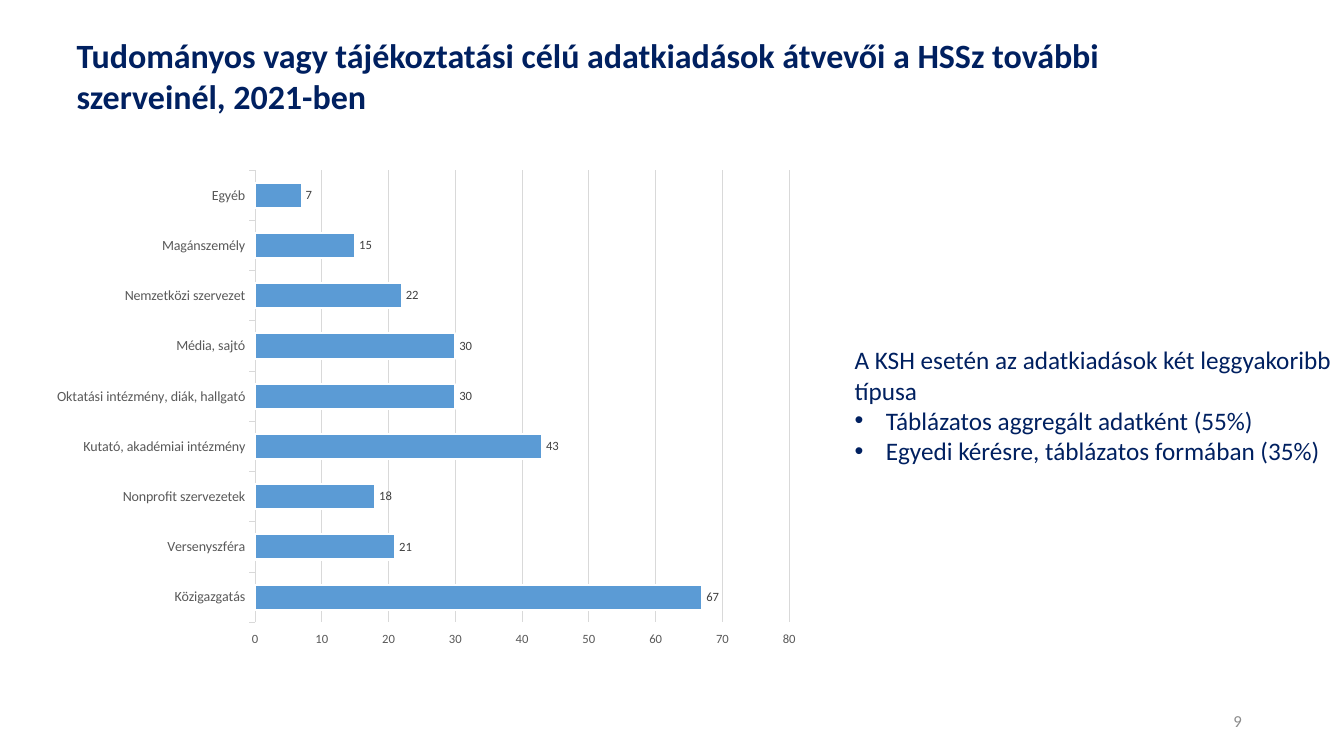
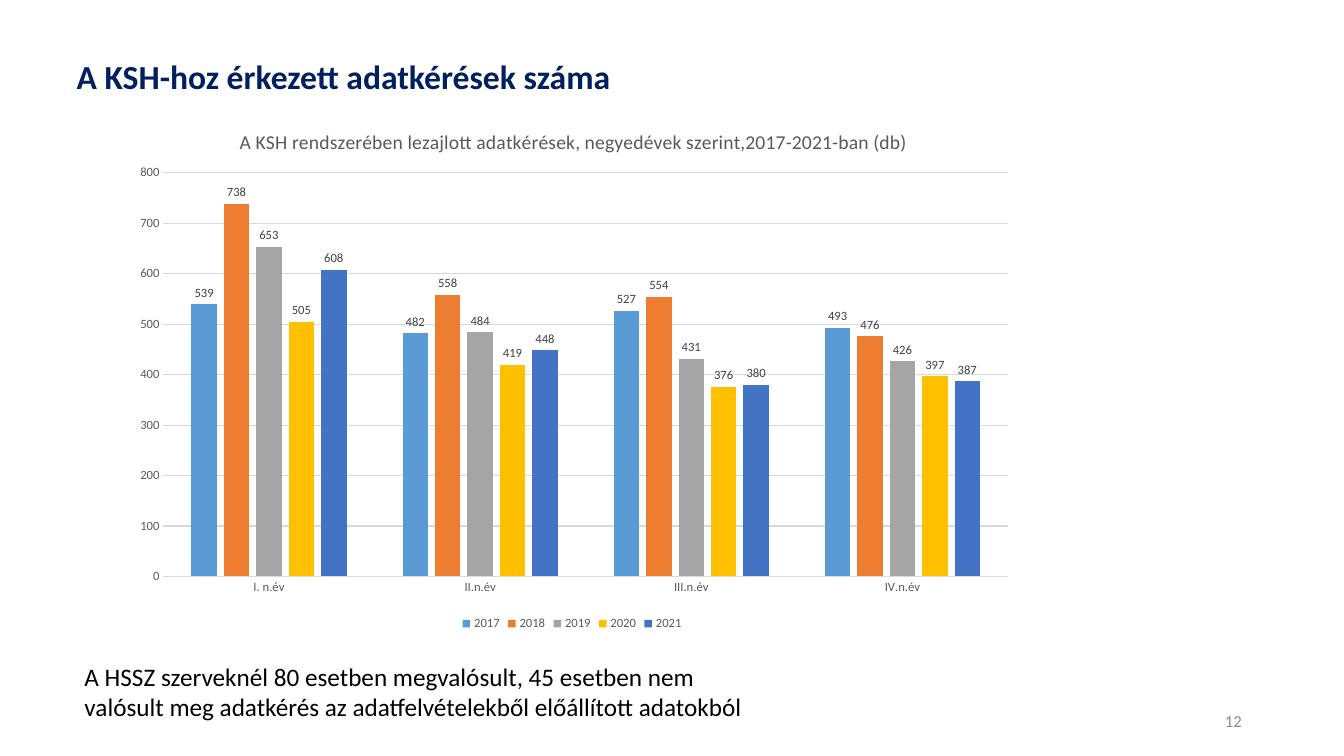
from dataclasses import dataclass

from lxml.etree import SubElement
from pptx import Presentation
from pptx.chart.data import CategoryChartData
from pptx.dml.color import RGBColor
from pptx.enum.chart import XL_CHART_TYPE, XL_LABEL_POSITION, XL_LEGEND_POSITION, XL_TICK_MARK
from pptx.enum.text import MSO_ANCHOR, PP_ALIGN
from pptx.oxml.ns import qn
from pptx.util import Inches, Pt

SLIDE_WIDTH, SLIDE_HEIGHT = Inches(13.33), Inches(7.5)
TITLE_ONLY = 5


@dataclass(frozen=True)
class Theme:
    font: str = "Calibri"
    navy: str = "002060"
    black: str = "000000"
    page_grey: str = "8C8C8C"
    axis_grey: str = "595959"
    label_grey: str = "404040"
    grid_grey: str = "D9D9D9"
    white: str = "FFFFFF"
    series: tuple = ("5B9BD5", "ED7D31", "A5A5A5", "FFC000", "4472C4")
    title: float = 24
    long_title: float = 24.3
    body: float = 18
    chart_title: float = 14
    page: float = 12
    category: float = 10
    small: float = 9


THEME = Theme()


def area(left, top, width, height):
    """Turn percentages of the slide's width and height into lengths."""
    return (
        int(SLIDE_WIDTH * left / 100),
        int(SLIDE_HEIGHT * top / 100),
        int(SLIDE_WIDTH * width / 100),
        int(SLIDE_HEIGHT * height / 100),
    )


def style_font(font, size, color, bold=False):
    font.name = THEME.font
    font.size = Pt(size)
    font.bold = bold
    font.color.rgb = RGBColor.from_string(color)


def add_run(paragraph, text, size, color, bold=False):
    run = paragraph.add_run()
    run.text = text
    style_font(run.font, size, color, bold)


def add_title(slide, text, top, height, size=THEME.title, anchor=MSO_ANCHOR.MIDDLE):
    title = slide.shapes.title
    title.left, title.top, title.width, title.height = area(4.95, top, 86.25, height)
    frame = title.text_frame
    frame.word_wrap = True
    frame.vertical_anchor = anchor
    frame.margin_top = frame.margin_bottom = 0
    paragraph = frame.paragraphs[0]
    paragraph.alignment = PP_ALIGN.LEFT
    add_run(paragraph, text, size, THEME.navy, bold=True)


def add_text_frame(slide, position):
    frame = slide.shapes.add_textbox(*area(*position)).text_frame
    frame.word_wrap = True
    return frame


def add_page_number(slide, number):
    frame = add_text_frame(slide, (70.65, 92.67, 22.5, 5.33))
    frame.vertical_anchor = MSO_ANCHOR.MIDDLE
    paragraph = frame.paragraphs[0]
    paragraph.alignment = PP_ALIGN.RIGHT
    add_run(paragraph, str(number), THEME.page, THEME.page_grey)


def add_bullet(paragraph):
    properties = paragraph._p.get_or_add_pPr()
    indent = Inches(0.31)
    properties.set("marL", str(indent))
    properties.set("indent", str(-indent))
    SubElement(properties, qn("a:buFont"), typeface="Arial")
    SubElement(properties, qn("a:buChar"), char="•")


def add_note(slide, position, lead, color, bullets=()):
    frame = add_text_frame(slide, position)
    add_run(frame.paragraphs[0], lead, THEME.body, color)
    for text in bullets:
        paragraph = frame.add_paragraph()
        add_bullet(paragraph)
        add_run(paragraph, text, THEME.body, color)


def set_layout(element, index, **shares):
    """Place a chart part by shares of the chart's size."""
    for old in element.findall(qn("c:layout")):
        element.remove(old)
    layout = SubElement(element, qn("c:layout"))
    element.insert(index, layout)
    manual = SubElement(layout, qn("c:manualLayout"))
    if "w" in shares:
        SubElement(manual, qn("c:layoutTarget"), val="inner")
    for mode in ("xMode", "yMode"):
        SubElement(manual, qn(f"c:{mode}"), val="edge")
    for key, share in shares.items():
        SubElement(manual, qn(f"c:{key}"), val=str(share))


def style_line(line, color, width=0.75):
    line.color.rgb = RGBColor.from_string(color)
    line.width = Pt(width)


def style_axes(chart, maximum, unit, category_size, tick):
    categories, values = chart.category_axis, chart.value_axis
    style_font(categories.tick_labels.font, category_size, THEME.axis_grey)
    style_font(values.tick_labels.font, THEME.small, THEME.axis_grey)
    for axis in (categories, values):
        axis.major_tick_mark = tick
        axis.minor_tick_mark = XL_TICK_MARK.NONE
    categories.has_major_gridlines = False
    style_line(categories.format.line, THEME.grid_grey)
    values.minimum_scale, values.maximum_scale = 0, maximum
    values.major_unit = unit
    values.has_major_gridlines = True
    style_line(values.major_gridlines.format.line, THEME.grid_grey)
    values.format.line.fill.background()


def add_bars(slide, kind, position, categories, series, gap, overlap=0, outline=None):
    data = CategoryChartData()
    data.categories = categories
    for name, values in series.items():
        data.add_series(name, values)
    chart = slide.shapes.add_chart(kind, *area(*position), data).chart
    chart.has_title = chart.has_legend = False
    style_font(chart.font, THEME.category, THEME.black)

    plot = chart.plots[0]
    plot.vary_by_categories = False
    plot.gap_width, plot.overlap = gap, overlap
    plot.has_data_labels = True
    labels = plot.data_labels
    labels.show_value = True
    labels.position = XL_LABEL_POSITION.OUTSIDE_END
    style_font(labels.font, THEME.small, THEME.label_grey)
    for bars, color in zip(plot.series, THEME.series):
        bars.invert_if_negative = False
        bars.format.fill.solid()
        bars.format.fill.fore_color.rgb = RGBColor.from_string(color)
        if outline:
            style_line(bars.format.line, outline, 1.5)
    return chart


def add_chart_title(chart, text, x, y):
    chart.has_title = True
    paragraph = chart.chart_title.text_frame.paragraphs[0]
    add_run(paragraph, text, THEME.chart_title, THEME.axis_grey)
    set_layout(chart._chartSpace.chart.find(qn("c:title")), 1, x=x, y=y)


def add_bottom_legend(chart):
    chart.has_legend = True
    chart.legend.position = XL_LEGEND_POSITION.BOTTOM
    chart.legend.include_in_layout = False
    style_font(chart.legend.font, THEME.small, THEME.axis_grey)


def build_recipients(slide):
    add_title(
        slide,
        "Tudományos vagy tájékoztatási célú adatkiadások átvevői a HSSz további "
        "szerveinél, 2021-ben",
        4.53, 19.33, THEME.long_title, MSO_ANCHOR.TOP,
    )
    add_page_number(slide, 9)
    add_note(
        slide, (62.85, 44.93, 37.13, 17.47),
        "A KSH esetén az adatkiadások két leggyakoribb típusa", THEME.navy,
        ("Táblázatos aggregált adatként (55%)", "Egyedi kérésre, táblázatos formában (35%)"),
    )
    recipients = {
        "Közigazgatás": 67,
        "Versenyszféra": 21,
        "Nonprofit szervezetek": 18,
        "Kutató, akadémiai intézmény": 43,
        "Oktatási intézmény, diák, hallgató": 30,
        "Média, sajtó": 30,
        "Nemzetközi szervezet": 22,
        "Magánszemély": 15,
        "Egyéb": 7,
    }
    chart = add_bars(
        slide, XL_CHART_TYPE.BAR_CLUSTERED, (2.85, 21.2, 57.6, 65.73),
        list(recipients), {"Series 1": list(recipients.values())},
        gap=100, outline=THEME.white,
    )
    style_axes(chart, 80, 10, THEME.category, XL_TICK_MARK.OUTSIDE)
    set_layout(chart._chartSpace.chart.plotArea, 0, x=0.28, y=0.02, w=0.69, h=0.91)


def build_requests(slide):
    add_title(slide, "A KSH-hoz érkezett adatkérések száma", 2.67, 14.8)
    add_page_number(slide, 12)
    add_note(
        slide, (5.55, 86.8, 51.15, 9.47),
        "A HSSZ szerveknél 80 esetben megvalósult, 45 esetben nem valósult meg "
        "adatkérés az adatfelvételekből előállított adatokból",
        THEME.black,
    )
    requests = {
        "2017": (539, 482, 527, 493),
        "2018": (738, 558, 554, 476),
        "2019": (653, 484, 431, 426),
        "2020": (505, 419, 376, 397),
        "2021": (608, 448, 380, 387),
    }
    chart = add_bars(
        slide, XL_CHART_TYPE.COLUMN_CLUSTERED, (8.78, 13.73, 67.58, 70.27),
        ("I. n.év", "II.n.év", "III.n.év", "IV.n.év"), requests, gap=219, overlap=-27,
    )
    style_axes(chart, 800, 100, THEME.small, XL_TICK_MARK.NONE)
    add_chart_title(
        chart,
        "A KSH rendszerében lezajlott adatkérések, negyedévek szerint,2017-2021-ban (db)",
        x=0.13, y=0.04,
    )
    add_bottom_legend(chart)
    set_layout(chart._chartSpace.chart.plotArea, 0, x=0.05, y=0.13, w=0.93, h=0.76)


def main():
    deck = Presentation()
    deck.slide_width, deck.slide_height = SLIDE_WIDTH, SLIDE_HEIGHT
    for build in (build_recipients, build_requests):
        build(deck.slides.add_slide(deck.slide_layouts[TITLE_ONLY]))
    deck.save("out.pptx")


if __name__ == "__main__":
    main()
